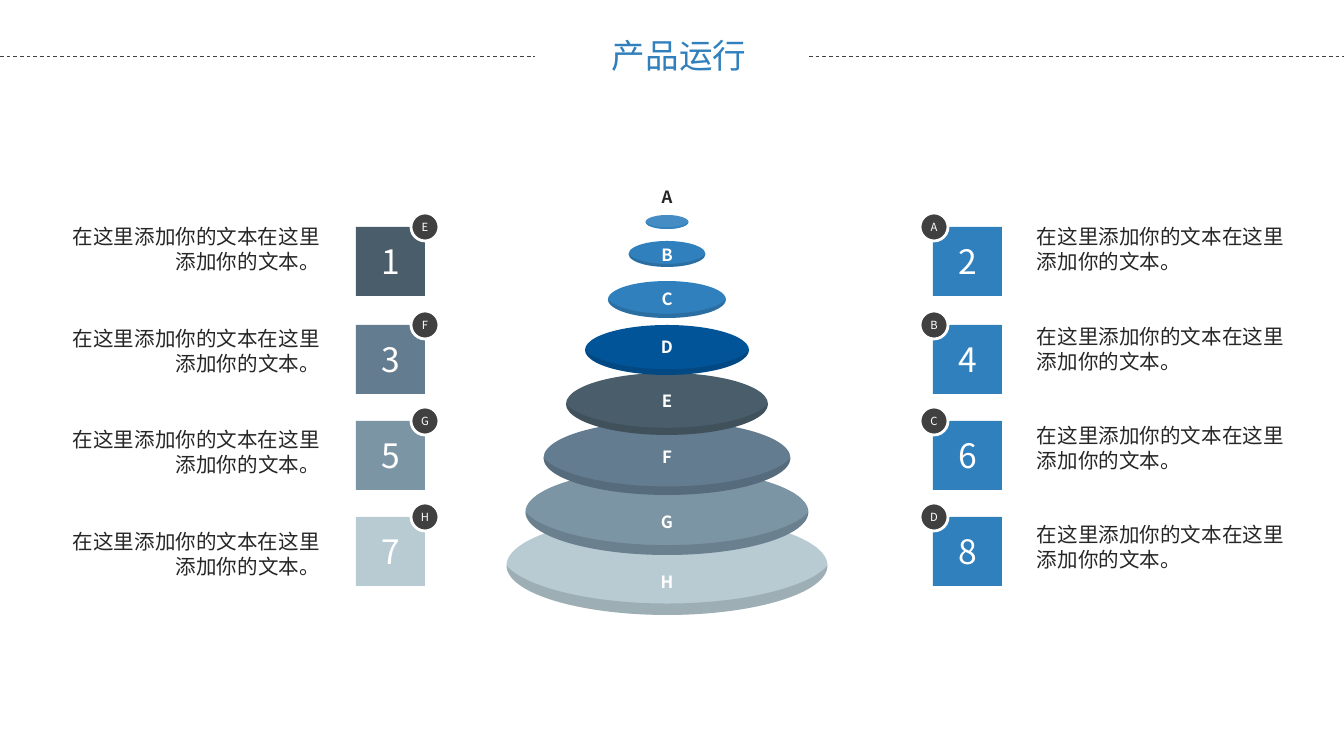
from dataclasses import dataclass
from typing import Optional

from lxml.etree import SubElement
from pptx import Presentation
from pptx.dml.color import RGBColor
from pptx.enum.dml import MSO_LINE
from pptx.enum.shapes import MSO_CONNECTOR, MSO_SHAPE as Shape
from pptx.enum.text import MSO_ANCHOR as Anchor, MSO_AUTO_SIZE as AutoSize, PP_ALIGN as Align
from pptx.oxml.ns import qn
from pptx.util import Emu, Pt

EMU_PER_PX = 9144000 / 1344
FONT = "Noto Sans CJK SC"
BODY = "在这里添加你的文本在这里添加你的文本。"
BLUE = RGBColor(0x30, 0x80, 0xBD)
NAVY = RGBColor(0x01, 0x54, 0x98)
SLATE = RGBColor(0x49, 0x5D, 0x6B)
STEEL = RGBColor(0x63, 0x7C, 0x90)
MIST = RGBColor(0x7C, 0x95, 0xA5)
PALE = RGBColor(0xB8, 0xCB, 0xD3)
CHARCOAL = RGBColor(0x40, 0x40, 0x40)
INK = RGBColor(0x26, 0x26, 0x26)
SHADE = RGBColor(0x0D, 0x0D, 0x0D)
WHITE = RGBColor(0xFF, 0xFF, 0xFF)

CENTRE = 667
TILE = 69
BADGE = 28
TILE_TOPS = (227, 325, 421, 517)
RIM_START = (0, 0.77)
RIM_CURVES = (
    ((-0.48, 0.77), (-0.89, 0.43), (-1, 0)),
    ((-1, 0.55), (-0.55, 1), (0, 1)),
    ((0.55, 1), (1, 0.55), (1, 0)),
    ((0.89, 0.43), (0.48, 0.77), RIM_START),
)


@dataclass(frozen=True)
class Disc:
    letter: str
    top: int
    width: int
    height: int
    label_top: int
    fill: RGBColor
    label_color: RGBColor = WHITE
    alpha: int = 100
    rim_fill: RGBColor = SHADE
    rim_alpha: int = 15


@dataclass(frozen=True)
class Column:
    tile_left: int
    badge_centre: int
    text_left: int
    text_width: int
    text_tops: tuple
    align: Align
    first_number: int
    letters: str
    fills: tuple


DISCS = (
    Disc("H", 516, 321, 99, 572, PALE),
    Disc("G", 469, 283, 86, 512, MIST),
    Disc("F", 421, 247, 74, 447, STEEL),
    Disc("E", 373, 202, 62, 391, SLATE),
    Disc("D", 325, 164, 50, 337, NAVY),
    Disc("C", 281, 118, 37, 289, BLUE),
    Disc("B", 241, 77, 26, 245, BLUE),
    Disc("A", 215, 43, 14, 187, BLUE, INK, 90, BLUE, 100),
)
COLUMNS = (
    Column(933, 934, 1027, 285, (219, 319, 418, 517), Align.LEFT, 2, "ABCD", (BLUE,) * 4),
    Column(356, 425, 54, 276, (219, 321, 422, 524), Align.RIGHT, 1, "EFGH", (SLATE, STEEL, MIST, PALE)),
)


def px(length: float) -> Emu:
    """Turn pixels into EMU."""
    return Emu(round(length * EMU_PER_PX))


def paint(shape, color: RGBColor, alpha: int = 100) -> None:
    """Give a shape a flat fill with no outline or shadow."""
    shape.shadow.inherit = False
    shape.line.fill.background()
    shape.fill.solid()
    shape.fill.fore_color.rgb = color
    if alpha < 100:
        color_node = shape.fill._xPr.find(qn("a:solidFill"))[0]
        SubElement(color_node, qn("a:alpha"), val=str(alpha * 1000))


def write(shape, text: str, size: int, color: RGBColor, align: Optional[Align] = None,
          inset: tuple = (10, 5), bold: Optional[bool] = None) -> None:
    """Put one formatted paragraph into a shape."""
    frame = shape.text_frame
    frame.margin_left = frame.margin_right = px(inset[0])
    frame.margin_top = frame.margin_bottom = px(inset[1])
    frame.text = text
    para = frame.paragraphs[0]
    para.alignment = align
    font = para.runs[0].font
    font.size, font.name, font.bold = Pt(size), FONT, bold
    font.color.rgb = color
    SubElement(font._element, qn("a:ea"), typeface=FONT)


def add_text(shapes, left: int, top: int, width: int, height: int, wrap: bool,
             text: str, size: int, color: RGBColor, **style) -> None:
    """Add a text box that grows with its text."""
    box = shapes.add_textbox(px(left), px(top), px(width), px(height))
    write(box, text, size, color, **style)
    box.text_frame.word_wrap = wrap
    box.text_frame.auto_size = AutoSize.SHAPE_TO_FIT_TEXT


def add_rule(shapes, start: int, end: int) -> None:
    """Add a dashed line beside the title."""
    rule = shapes.add_connector(MSO_CONNECTOR.STRAIGHT, px(start), px(56), px(end), px(56))
    rule.line.color.rgb = CHARCOAL
    rule.line.width = Pt(0.5)
    rule.line.dash_style = MSO_LINE.DASH
    SubElement(rule._element.spPr, qn("a:effectLst"))


def add_rim(shapes, disc: Disc) -> None:
    """Add the curved crescent along the lower edge of a disc."""
    def place(point: tuple) -> tuple:
        """Turn a point relative to the disc into slide EMU."""
        return (px(CENTRE + point[0] * disc.width / 2),
                px(disc.top + (1 + point[1]) * disc.height / 2))

    builder = shapes.build_freeform(*place(RIM_START))
    builder.add_line_segments([place(curve[-1]) for curve in RIM_CURVES], close=True)
    rim = builder.convert_to_shape()
    segments = list(rim._element.iter(qn("a:lnTo")))
    for segment, curve in zip(segments, RIM_CURVES):
        segment.tag = qn("a:cubicBezTo")
        for index, control in enumerate(curve[:-1]):
            x, y = place(control)
            handle = SubElement(segment, qn("a:pt"), x=str(x - rim.left), y=str(y - rim.top))
            segment.insert(index, handle)
    paint(rim, disc.rim_fill, disc.rim_alpha)


def add_disc(shapes, disc: Disc) -> None:
    """Add an ellipse and its rim."""
    face = shapes.add_shape(Shape.OVAL, px(CENTRE - disc.width / 2), px(disc.top),
                            px(disc.width), px(disc.height))
    paint(face, disc.fill, disc.alpha)
    add_rim(shapes, disc)


def add_tile(shapes, column: Column, row: int) -> None:
    """Add a numbered square with its lettered badge."""
    top = TILE_TOPS[row]
    tile = shapes.add_shape(Shape.RECTANGLE, px(column.tile_left), px(top), px(TILE), px(TILE))
    paint(tile, column.fills[row])
    write(tile, str(column.first_number + 2 * row), 18, WHITE, Align.CENTER)
    badge = shapes.add_shape(Shape.OVAL, px(column.badge_centre - BADGE / 2), px(top - BADGE / 2),
                             px(BADGE), px(BADGE))
    paint(badge, CHARCOAL)
    badge.line.color.rgb = WHITE
    badge.line.width = Pt(1.5)
    write(badge, column.letters[row], 6, WHITE, Align.CENTER, (0, 0))
    for shape in (tile, badge):
        shape.text_frame.vertical_anchor = Anchor.MIDDLE


def main() -> None:
    """Build the slide and save the deck."""
    deck = Presentation()
    deck.slide_width, deck.slide_height = px(1344), px(756)
    page = deck.slides.add_slide(deck.slide_layouts[6])
    shapes = page.shapes
    add_text(shapes, 602, 30, 156, 51, False, "产品运行", 18, BLUE)
    add_rule(shapes, 0, 535)
    add_rule(shapes, 809, 1344)
    for column in COLUMNS:
        for row in range(len(TILE_TOPS)):
            add_tile(shapes, column, row)
    pyramid = shapes.add_group_shape().shapes
    for disc in DISCS:
        add_disc(pyramid, disc)
    for disc in DISCS:
        add_text(pyramid, CENTRE - 7, disc.label_top, 14, 20, False, disc.letter, 9,
                 disc.label_color, align=Align.CENTER, inset=(0, 0), bold=True)
    for column in COLUMNS:
        for top in column.text_tops:
            add_text(shapes, column.text_left, top, column.text_width, 60, True, BODY, 11, INK,
                     align=column.align)
    deck.save("out.pptx")


if __name__ == "__main__":
    main()
